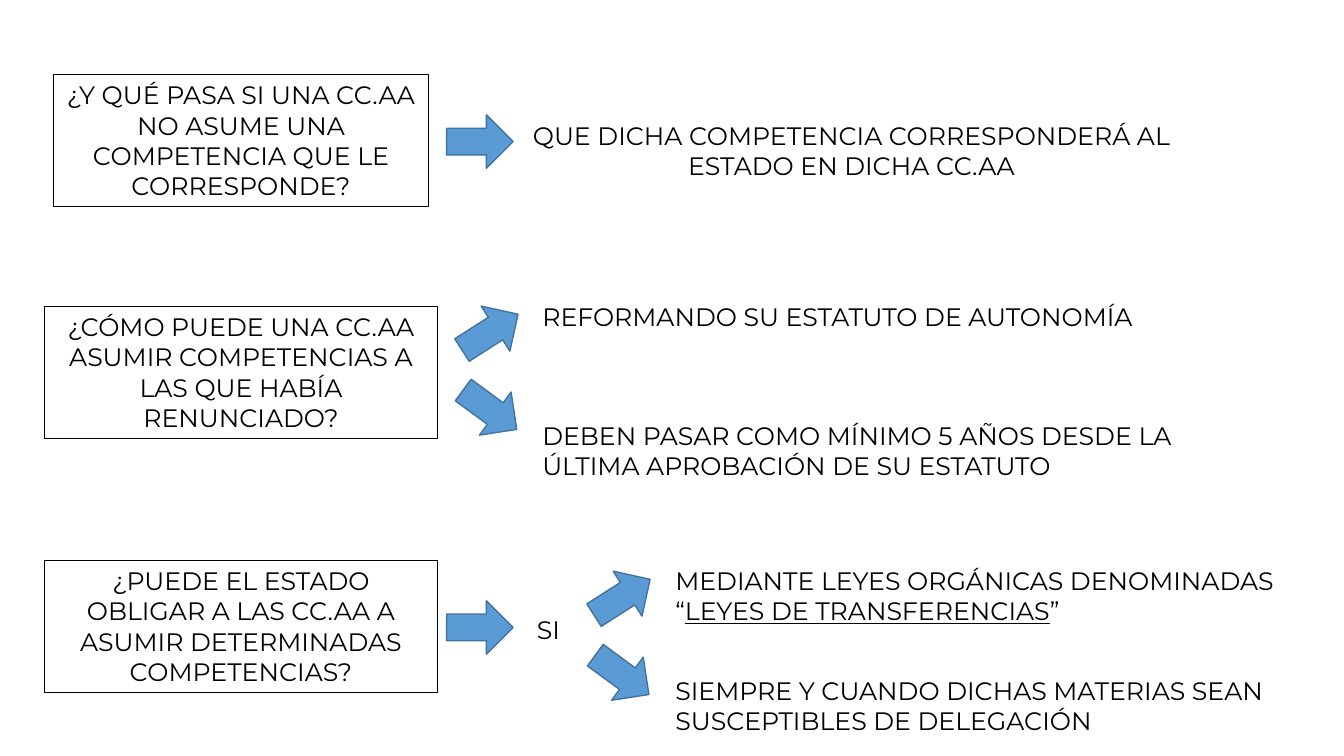
from dataclasses import dataclass

from pptx import Presentation
from pptx.dml.color import RGBColor
from pptx.enum.shapes import MSO_SHAPE
from pptx.enum.text import MSO_ANCHOR, PP_ALIGN
from pptx.util import Inches, Pt

RECT, ARROW = MSO_SHAPE.RECTANGLE, MSO_SHAPE.RIGHT_ARROW
LEFT, CENTER = PP_ALIGN.LEFT, PP_ALIGN.CENTER
TOP = MSO_ANCHOR.TOP


@dataclass(frozen=True)
class Theme:
    font: str = "Montserrat"
    size: float = 18
    ink: RGBColor = RGBColor(0, 0, 0)
    blue: RGBColor = RGBColor(0x5B, 0x9B, 0xD5)
    edge: RGBColor = RGBColor(0x43, 0x73, 0x9E)
    frame: float = 0.75
    rim: float = 1


THEME = Theme()
UP, DOWN = 327.4, 36.3
ONE, TWO, FOUR = 0.4, 0.71, 1.31  # box heights by number of text lines


def write(shape, runs, align):
    """Fill a shape with one paragraph of (text, underline) runs."""
    frame = shape.text_frame
    frame.word_wrap = True
    frame.vertical_anchor = TOP
    par = frame.paragraphs[0]
    par.alignment = align
    look = {"name": THEME.font, "size": Pt(THEME.size)}
    for text, under in runs:
        run = par.add_run()
        run.text = text
        for key, value in (look | {"underline": under}).items():
            setattr(run.font, key, value)
        run.font.color.rgb = THEME.ink


def note(slide, box, *runs, align=LEFT):
    shape = slide.shapes.add_textbox(*map(Inches, box))
    write(shape, runs, align)


def ask(slide, box, text):
    """Framed question."""
    shape = slide.shapes.add_shape(RECT, *map(Inches, box))
    shape.shadow.inherit = False
    shape.fill.background()
    shape.line.color.rgb = THEME.ink
    shape.line.width = Pt(THEME.frame)
    write(shape, [(text, False)], CENTER)


def arrow(slide, x, y, turn=0):
    shape = slide.shapes.add_shape(
        ARROW, Inches(x), Inches(y), Inches(0.66), Inches(0.53))
    shape.shadow.inherit = False
    shape.fill.solid()
    shape.fill.fore_color.rgb = THEME.blue
    shape.line.color.rgb = THEME.edge
    shape.line.width = Pt(THEME.rim)
    shape.rotation = turn


def fork(slide, x, y):
    """Two arrows that part upwards and downwards."""
    for step, turn in enumerate((UP, DOWN)):
        arrow(slide, x, y + 0.77 * step, turn)


def refusal(slide, x, y):
    ask(slide, (x, y, 3.72, FOUR),
        "¿Y QUÉ PASA SI UNA CC.AA NO ASUME UNA COMPETENCIA QUE LE CORRESPONDE?")
    arrow(slide, x + 3.9, y + 0.4)
    note(slide, (x + 4.57, y + 0.4, 6.69, TWO),
         ("QUE DICHA COMPETENCIA CORRESPONDERÁ AL ESTADO EN DICHA CC.AA", False),
         align=CENTER)


def recovery(slide, x, y):
    ask(slide, (x, y, 3.9, FOUR),
        "¿CÓMO PUEDE UNA CC.AA ASUMIR COMPETENCIAS A LAS QUE HABÍA RENUNCIADO?")
    fork(slide, x + 4.09, y - 0.01)
    note(slide, (x + 4.84, y - 0.1, 6.51, ONE),
         ("REFORMANDO SU ESTATUTO DE AUTONOMÍA", False))
    note(slide, (x + 4.84, y + 1.08, 6.51, TWO),
         ("DEBEN PASAR COMO MÍNIMO 5 AÑOS DESDE LA ÚLTIMA APROBACIÓN "
          "DE SU ESTATUTO", False))


def duty(slide, x, y):
    ask(slide, (x, y, 3.9, FOUR),
        "¿PUEDE EL ESTADO OBLIGAR A LAS CC.AA A ASUMIR DETERMINADAS COMPETENCIAS?")
    arrow(slide, x + 3.99, y + 0.4)
    note(slide, (x + 4.75, y + 0.49, 0.5, ONE), ("SI", False), align=CENTER)
    fork(slide, x + 5.4, y + 0.1)
    note(slide, (x + 6.16, y, 6.74, TWO),
         ("MEDIANTE LEYES ORGÁNICAS DENOMINADAS “", False),
         ("LEYES DE TRANSFERENCIAS", True), ("”", False))
    note(slide, (x + 6.16, y + 1.09, 6.74, TWO),
         ("SIEMPRE Y CUANDO DICHAS MATERIAS SEAN SUSCEPTIBLES DE DELEGACIÓN",
          False))


def main():
    deck = Presentation()
    deck.slide_width, deck.slide_height = Inches(13.33), Inches(7.5)
    slide = deck.slides.add_slide(deck.slide_layouts[6])
    refusal(slide, 0.53, 0.74)
    recovery(slide, 0.44, 3.04)
    duty(slide, 0.44, 5.56)
    deck.save("out.pptx")


if __name__ == "__main__":
    main()
